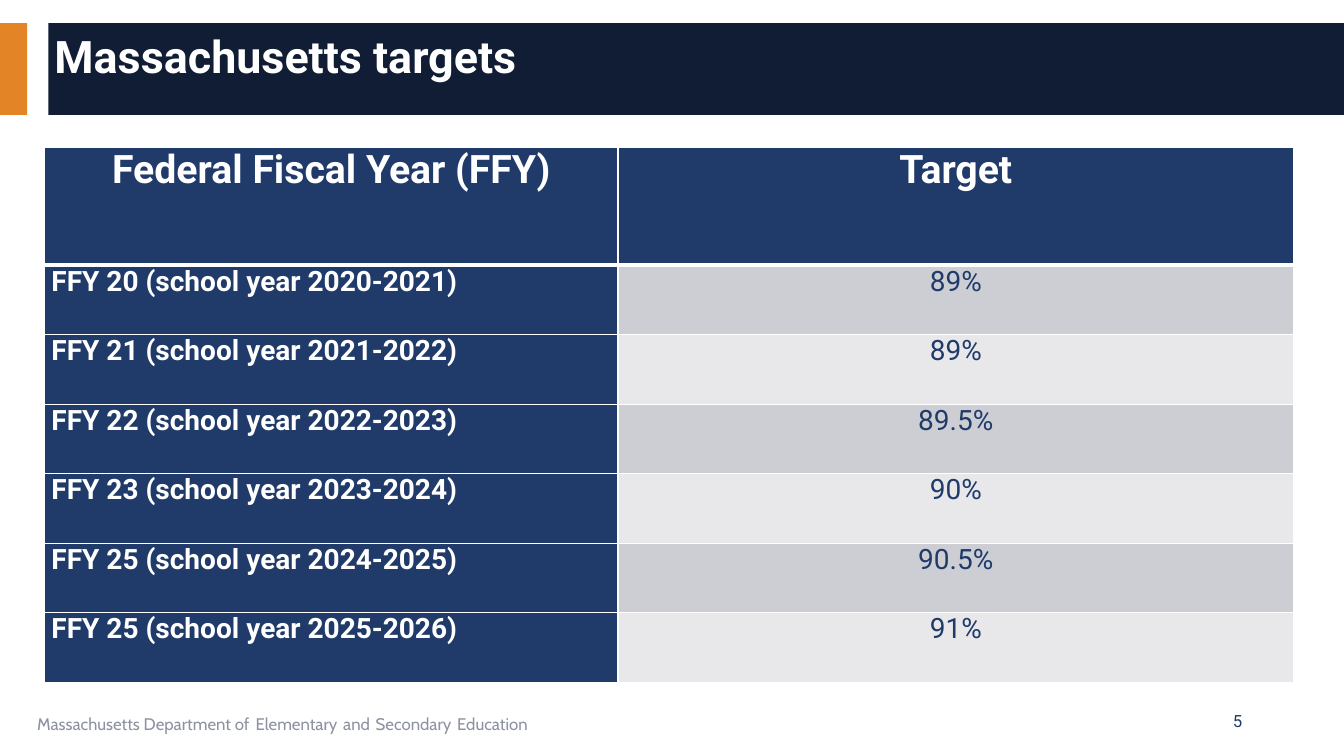
"""Build the Massachusetts targets slide: title band, target table and footer."""
from lxml import etree
from pptx import Presentation
from pptx.dml.color import RGBColor
from pptx.enum.shapes import MSO_SHAPE
from pptx.enum.text import MSO_ANCHOR, PP_ALIGN
from pptx.oxml.ns import qn
from pptx.util import Inches, Pt

RECTANGLE = MSO_SHAPE.RECTANGLE
TOP, MIDDLE = MSO_ANCHOR.TOP, MSO_ANCHOR.MIDDLE
LEFT, CENTER, RIGHT = PP_ALIGN.LEFT, PP_ALIGN.CENTER, PP_ALIGN.RIGHT
COLORS = {
    "orange": "E38526",
    "midnight": "101D35",
    "navy": "203B6A",
    "gray": "8D92A1",
    "dark_row": "CDCED4",
    "light_row": "E8E8EB",
    "white": "FFFFFF",
}
TARGETS = [
    ("Federal Fiscal Year (FFY)", "Target"),
    ("FFY 20 (school year 2020-2021)", "89%"),
    ("FFY 21 (school year 2021-2022)", "89%"),
    ("FFY 22 (school year 2022-2023)", "89.5%"),
    ("FFY 23 (school year 2023-2024)", "90%"),
    ("FFY 25 (school year 2024-2025)", "90.5%"),
    ("FFY 25 (school year 2025-2026)", "91%"),
]
FOOTER_PARTS = ["Massachusetts Department of", "Elementary", "and", "Secondary", "Education"]


def set_font(font, size, color, bold=False, name="Roboto"):
    font.name = name
    font.size = Pt(size)
    font.bold = bold
    font.color.rgb = RGBColor.from_string(COLORS[color])


def add_border(cell, side, width):
    properties = cell._tc.get_or_add_tcPr()
    line = etree.SubElement(properties, qn(f"a:ln{side}"), w=str(Pt(width)))
    fill = etree.SubElement(line, qn("a:solidFill"))
    etree.SubElement(fill, qn("a:srgbClr"), val=COLORS["white"])


presentation = Presentation()
presentation.slide_width = Inches(13.33)
presentation.slide_height = Inches(7.5)
slide = presentation.slides.add_slide(presentation.slide_layouts[5])

title = slide.shapes.title
title.left, title.top = Inches(0.44), Inches(0.3)
title.width, title.height = Inches(12.62), Inches(0.57)
title.text_frame.text = "Massachusetts targets"
title.text_frame.vertical_anchor = MIDDLE
title_paragraph = title.text_frame.paragraphs[0]
title_paragraph.alignment = LEFT
title_paragraph.line_spacing = 0.9
set_font(title_paragraph.font, 32, "white", bold=True)

for left, width, color in [(0, 0.27, "orange"), (0.48, 12.85, "midnight")]:
    band = slide.shapes.add_shape(RECTANGLE, Inches(left), Inches(0.23), Inches(width), Inches(0.91))
    band.shadow.inherit = False
    band.fill.solid()
    band.fill.fore_color.rgb = RGBColor.from_string(COLORS[color])
    band.line.fill.background()
    title.element.addprevious(band.element)

footer = slide.shapes.add_textbox(Inches(0.27), Inches(6.95), Inches(8.44), Inches(0.4))
footer.text_frame.word_wrap = True
footer_paragraph = footer.text_frame.paragraphs[0]
for index, part in enumerate(FOOTER_PARTS):
    if index:
        space = footer_paragraph.add_run()
        space.text = " "
        set_font(space.font, 18, "navy", name="Cabin")
    run = footer_paragraph.add_run()
    run.text = part
    set_font(run.font, 12, "gray", name="Cabin")

number = slide.shapes.add_textbox(Inches(9.42), Inches(6.95), Inches(3), Inches(0.4))
number.text_frame.word_wrap = True
number.text_frame.vertical_anchor = MIDDLE
number.text_frame.text = "5"
number_paragraph = number.text_frame.paragraphs[0]
number_paragraph.alignment = RIGHT
set_font(number_paragraph.font, 12, "navy")

table = slide.shapes.add_table(
    len(TARGETS), 2, Inches(0.44), Inches(1.46), Inches(12.39), Inches(5.29)
).table
table.columns[0].width = Inches(5.69)
table.columns[1].width = Inches(6.7)

for row_index, texts in enumerate(TARGETS):
    is_header = row_index == 0
    table.rows[row_index].height = Inches(1.17 if is_header else 0.69)
    for column_index, text in enumerate(texts):
        is_label = is_header or column_index == 0
        cell = table.cell(row_index, column_index)
        cell.margin_left = cell.margin_right = Inches(0.07)
        cell.margin_top = cell.margin_bottom = 0
        cell.vertical_anchor = TOP
        add_border(cell, "L", 1)
        add_border(cell, "R", 1)
        add_border(cell, "T", 3 if row_index == 1 else 1)
        add_border(cell, "B", 3 if is_header else 1)
        row_color = "dark_row" if row_index % 2 else "light_row"
        cell.fill.solid()
        cell.fill.fore_color.rgb = RGBColor.from_string(COLORS["navy" if is_label else row_color])
        cell.text = text
        paragraph = cell.text_frame.paragraphs[0]
        paragraph.alignment = CENTER if is_header or column_index else LEFT
        set_font(paragraph.font, 28 if is_header else 20, "white" if is_label else "navy", bold=is_label)

presentation.save("out.pptx")
